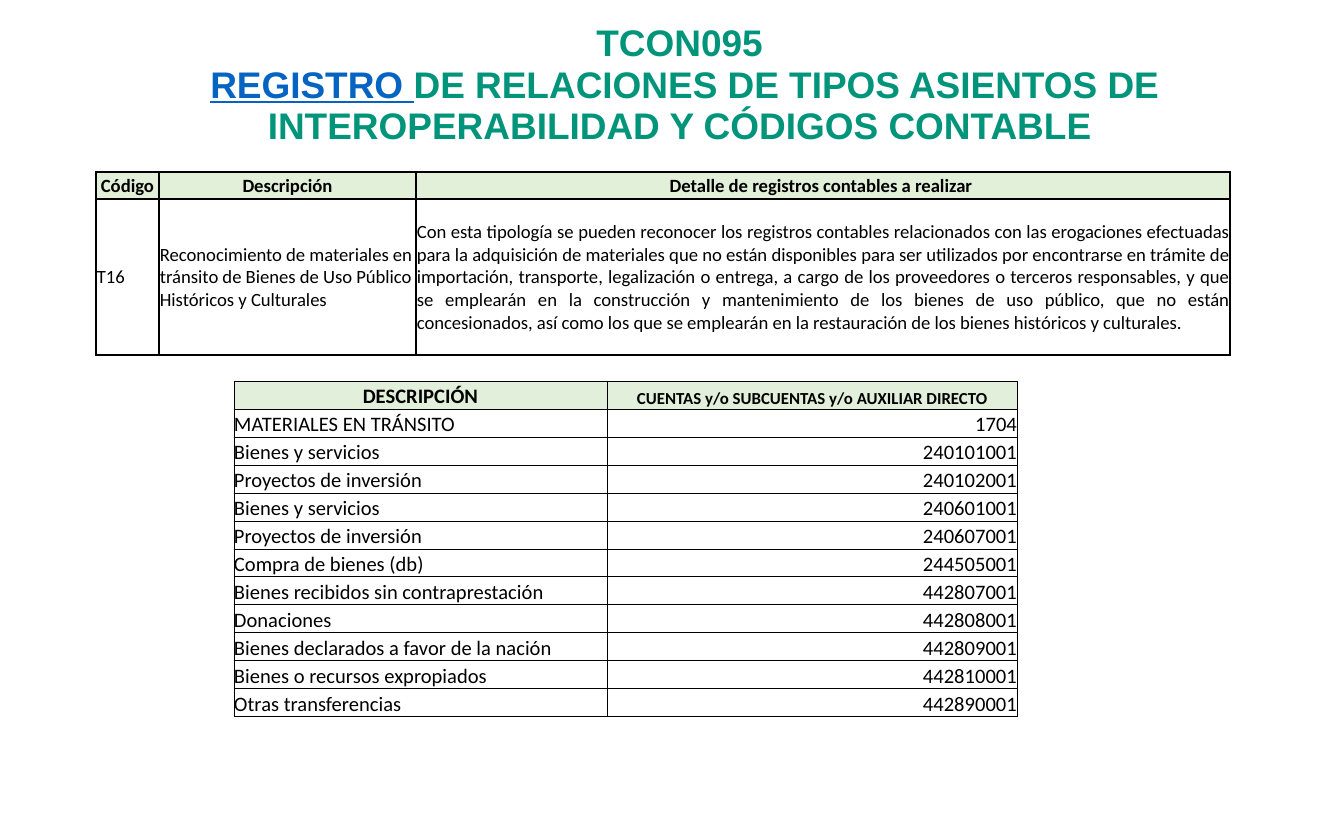
"""Build the TCON095 slide relating entry types to accounting codes."""
from dataclasses import dataclass

from lxml.etree import SubElement
from pptx import Presentation
from pptx.dml.color import RGBColor as RGB
from pptx.enum.text import MSO_ANCHOR as Anchor, PP_ALIGN as Align
from pptx.oxml.ns import qn
from pptx.util import Emu, Pt

EMU_PER_PX = 914400 / 134.4


@dataclass(frozen=True)
class Theme:
    title: str = "00947A"
    link: str = "0563C1"
    ink: str = "000000"
    type_head: str = "E2EFD9"
    account_head: str = "E2EFDA"
    title_font: str = "Arial"
    body_font: str = "Calibri"
    title_pt: float = 19.8
    type_pt: int = 10
    account_pt: int = 11
    account_note_pt: int = 9


@dataclass(frozen=True)
class Grid:
    left: int
    top: int
    cols: list[int]
    heights: list[int]
    rows: list[tuple[str, ...]]
    aligns: list[Align]
    head_fill: str
    head_sizes: list[int]
    size: int
    anchor: Anchor
    border: float
    margins: tuple[int, int, int, int]


THEME = Theme()

ACCOUNTS = [
    ("DESCRIPCIÓN", "CUENTAS y/o SUBCUENTAS y/o AUXILIAR DIRECTO"),
    ("MATERIALES EN TRÁNSITO", "1704"),
    ("Bienes y servicios", "240101001"),
    ("Proyectos de inversión", "240102001"),
    ("Bienes y servicios", "240601001"),
    ("Proyectos de inversión", "240607001"),
    ("Compra de bienes (db)", "244505001"),
    ("Bienes recibidos sin contraprestación", "442807001"),
    ("Donaciones", "442808001"),
    ("Bienes declarados a favor de la nación", "442809001"),
    ("Bienes o recursos expropiados", "442810001"),
    ("Otras transferencias", "442890001"),
]

ENTRY_TYPES = [
    ("Código", "Descripción", "Detalle de registros contables a realizar "),
    (
        "T16",
        "Reconocimiento de materiales en tránsito de Bienes de Uso Público "
        "Históricos y Culturales",
        "Con esta tipología se pueden reconocer los registros contables "
        "relacionados con las erogaciones efectuadas para la adquisición de "
        "materiales que no están disponibles para ser utilizados por "
        "encontrarse en trámite de importación, transporte, legalización o "
        "entrega, a cargo de los proveedores o terceros responsables, y que "
        "se emplearán en la construcción y mantenimiento de los bienes de uso "
        "público, que no están concesionados, así como los que se emplearán "
        "en la restauración de los bienes históricos y culturales.",
    ),
]

GRIDS = [
    Grid(96, 172, [63, 257, 814], [27, 156], ENTRY_TYPES,
         [Align.LEFT, Align.LEFT, Align.JUSTIFY], THEME.type_head,
         [THEME.type_pt] * 3, THEME.type_pt, Anchor.MIDDLE, 1, (1, 1, 1, 0)),
    Grid(234, 381, [373, 410], [28] * len(ACCOUNTS), ACCOUNTS,
         [Align.LEFT, Align.RIGHT], THEME.account_head,
         [THEME.account_pt, THEME.account_note_pt], THEME.account_pt,
         Anchor.BOTTOM, 0.5, (0, 0, 0, 0)),
]


def px(n: int) -> Emu:
    return Emu(round(n * EMU_PER_PX))


def add_run(p, text: str, *, size: float, font: str = THEME.body_font,
            color: str = THEME.ink, bold: bool = False,
            underline: bool = False) -> None:
    r = p.add_run()
    r.text = text
    f = r.font
    f.size, f.name, f.bold, f.underline = Pt(size), font, bold, underline
    f.color.rgb = RGB.from_string(color)


def add_title(s) -> None:
    tf = s.shapes.add_textbox(px(15), px(23), px(1329), px(120)).text_frame
    tf.word_wrap = True
    tf.margin_top = tf.margin_bottom = 0
    p = tf.paragraphs[0]
    p.alignment, p.line_spacing = Align.CENTER, 0.94
    style = dict(size=THEME.title_pt, font=THEME.title_font, bold=True)
    add_run(p, "TCON095", color=THEME.title, **style)
    p.add_line_break()
    add_run(p, " ", color=THEME.title, **style)
    add_run(p, "REGISTRO ", color=THEME.link, underline=True, **style)
    add_run(p, "DE RELACIONES DE TIPOS ASIENTOS DE INTEROPERABILIDAD Y "
            "CÓDIGOS CONTABLE", color=THEME.title, **style)


def add_borders(cell, width: float) -> None:
    tc_pr = cell._tc.get_or_add_tcPr()
    for side in "LRTB":
        ln = SubElement(tc_pr, qn(f"a:ln{side}"), w=str(Pt(width)))
        fill = SubElement(ln, qn("a:solidFill"))
        SubElement(fill, qn("a:srgbClr"), val=THEME.ink)


def fill_cell(cell, text: str, g: Grid, col: int, head: bool) -> None:
    add_borders(cell, g.border)
    if head:
        cell.fill.solid()
        cell.fill.fore_color.rgb = RGB.from_string(g.head_fill)
    else:
        cell.fill.background()
    (cell.margin_left, cell.margin_top,
     cell.margin_right, cell.margin_bottom) = map(px, g.margins)
    cell.vertical_anchor = g.anchor
    p = cell.text_frame.paragraphs[0]
    p.alignment = Align.CENTER if head else g.aligns[col]
    add_run(p, text, size=g.head_sizes[col] if head else g.size, bold=head)


def add_grid(s, g: Grid) -> None:
    table = s.shapes.add_table(len(g.rows), len(g.cols), px(g.left), px(g.top),
                               px(sum(g.cols)), px(sum(g.heights))).table
    table.first_row = table.horz_banding = False
    for column, width in zip(table.columns, g.cols):
        column.width = px(width)
    for i, (row, height) in enumerate(zip(g.rows, g.heights)):
        table.rows[i].height = px(height)
        for j, text in enumerate(row):
            fill_cell(table.cell(i, j), text, g, j, head=i == 0)


def main() -> None:
    prs = Presentation()
    prs.slide_width, prs.slide_height = px(1344), px(840)
    s = prs.slides.add_slide(prs.slide_layouts[6])
    add_title(s)
    for g in GRIDS:
        add_grid(s, g)
    prs.save("out.pptx")


if __name__ == "__main__":
    main()
